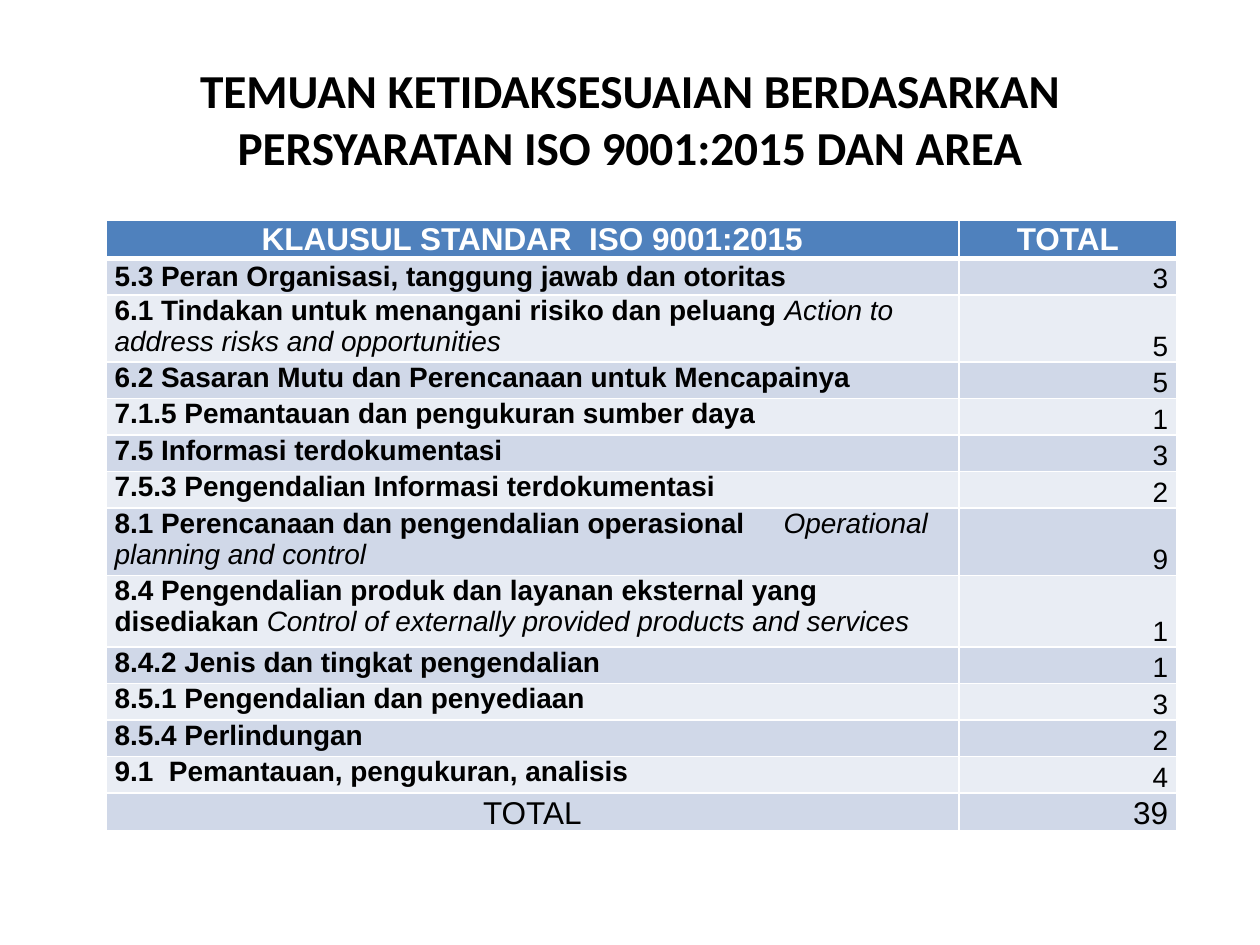
import dataclasses

import lxml.etree
import pptx
import pptx.dml.color
import pptx.enum.text
import pptx.oxml.ns
import pptx.table
import pptx.util

EMU_PER_PX = 9144
ROW_HEIGHT = 29
GAP_TAB = 531
INSET = 7
BANDS = ("D0D8E8", "E9EDF4")
ALIGN = pptx.enum.text.PP_ALIGN
ANCHOR = pptx.enum.text.MSO_ANCHOR


@dataclasses.dataclass(frozen=True)
class Clause:
    name: str
    count: int
    english: str = ""
    height: int = ROW_HEIGHT
    anchor: ANCHOR = ANCHOR.TOP


@dataclasses.dataclass(frozen=True)
class CellStyle:
    fill: str
    align: ALIGN
    anchor: ANCHOR
    size: int = 16
    bold: bool = False
    color: str = "000000"
    bottom_line: int = 1


CLAUSES = [
    Clause("5.3 Peran Organisasi, tanggung jawab dan otoritas", 3, anchor=ANCHOR.MIDDLE),
    Clause("6.1 Tindakan untuk menangani risiko dan peluang ", 5,
           "Action to address risks and opportunities", 49),
    Clause("6.2 Sasaran Mutu dan Perencanaan untuk Mencapainya", 5),
    Clause("7.1.5 Pemantauan dan pengukuran sumber daya", 1),
    Clause("7.5 Informasi terdokumentasi", 3),
    Clause("7.5.3 Pengendalian Informasi terdokumentasi", 2),
    Clause("8.1 Perencanaan dan pengendalian operasional\t", 9,
           "Operational planning and control", 49),
    Clause("8.4 Pengendalian produk dan layanan eksternal yang disediakan ", 1,
           "Control of externally provided products and services", 57),
    Clause("8.4.2 Jenis dan tingkat pengendalian", 1),
    Clause("8.5.1 Pengendalian dan penyediaan", 3),
    Clause("8.5.4 Perlindungan", 2),
    Clause("9.1  Pemantauan, pengukuran, analisis", 4),
]


def px(length: int) -> pptx.util.Emu:
    """Turn a length in px into EMU."""
    return pptx.util.Emu(length * EMU_PER_PX)


def rgb(value: str) -> pptx.dml.color.RGBColor:
    """Turn a hex string into a colour."""
    return pptx.dml.color.RGBColor.from_string(value)


def add_child(parent, tag: str, **attributes: str):
    """Append a DrawingML element to its parent."""
    return lxml.etree.SubElement(parent, pptx.oxml.ns.qn(tag), attributes)


def set_borders(cell: pptx.table._Cell, bottom_line: int) -> None:
    """Draw white lines on the four sides of a cell."""
    properties = cell._tc.get_or_add_tcPr()
    for side, width in (("L", 1), ("R", 1), ("T", 1), ("B", bottom_line)):
        line = add_child(properties, f"a:ln{side}", w=str(pptx.util.Pt(width)))
        add_child(add_child(line, "a:solidFill"), "a:srgbClr", val="FFFFFF")


def fill_cell(cell: pptx.table._Cell, text: str, style: CellStyle, english: str = "") -> None:
    """Write and style one cell, with an optional italic English ending."""
    set_borders(cell, style.bottom_line)
    cell.fill.solid()
    cell.fill.fore_color.rgb = rgb(style.fill)
    cell.margin_left = cell.margin_right = px(INSET)
    cell.margin_top = cell.margin_bottom = 0
    cell.vertical_anchor = style.anchor
    paragraph = cell.text_frame.paragraphs[0]
    paragraph.alignment = style.align
    paragraph.font.name = "Arial"
    paragraph.font.size = pptx.util.Pt(style.size)
    paragraph.font.color.rgb = rgb(style.color)
    if "\t" in text:
        tabs = lxml.etree.Element(pptx.oxml.ns.qn("a:tabLst"))
        add_child(tabs, "a:tab", pos=str(px(GAP_TAB)), algn="l")
        paragraph._p.get_or_add_pPr().insert(0, tabs)
    run = paragraph.add_run()
    run.text = text
    run.font.bold = style.bold
    if english:
        translation = paragraph.add_run()
        translation.text = english
        translation.font.bold = False
        translation.font.italic = True


def add_title(slide, text: str) -> None:
    """Add the centred slide title."""
    frame = slide.shapes.add_textbox(px(50), px(42), px(900), px(103)).text_frame
    frame.word_wrap = True
    frame.vertical_anchor = ANCHOR.MIDDLE
    paragraph = frame.paragraphs[0]
    paragraph.text = text
    paragraph.alignment = ALIGN.CENTER
    paragraph.font.name = "Calibri"
    paragraph.font.size = pptx.util.Pt(27)
    paragraph.font.bold = True
    paragraph.font.color.rgb = rgb("000000")


def add_findings(slide, clauses: list[Clause]) -> None:
    """Add the table of findings with its header and total rows."""
    heights = [ROW_HEIGHT, *(clause.height for clause in clauses), ROW_HEIGHT]
    shape = slide.shapes.add_table(len(heights), 2, px(84), px(175), px(850), px(sum(heights)))
    table = shape.table
    for column, width in zip(table.columns, (677, 173)):
        column.width = px(width)
    for row, height in zip(table.rows, heights):
        row.height = px(height)

    header = CellStyle("4F81BD", ALIGN.CENTER, ANCHOR.MIDDLE, 18, True, "FFFFFF", 3)
    fill_cell(table.cell(0, 0), "KLAUSUL STANDAR  ISO 9001:2015", header)
    fill_cell(table.cell(0, 1), "TOTAL", header)
    for index, clause in enumerate(clauses):
        band = BANDS[index % 2]
        name_style = CellStyle(band, ALIGN.LEFT, clause.anchor, bold=True)
        count_style = CellStyle(band, ALIGN.RIGHT, ANCHOR.BOTTOM)
        fill_cell(table.cell(index + 1, 0), clause.name, name_style, clause.english)
        fill_cell(table.cell(index + 1, 1), str(clause.count), count_style)
    last = len(heights) - 1
    total = sum(clause.count for clause in clauses)
    band = BANDS[len(clauses) % 2]
    fill_cell(table.cell(last, 0), "TOTAL", CellStyle(band, ALIGN.CENTER, ANCHOR.BOTTOM, 18))
    fill_cell(table.cell(last, 1), str(total), CellStyle(band, ALIGN.RIGHT, ANCHOR.BOTTOM, 18))


def main() -> None:
    presentation = pptx.Presentation()
    presentation.slide_width = px(1000)
    presentation.slide_height = px(750)
    slide = presentation.slides.add_slide(presentation.slide_layouts[6])
    add_title(slide, "TEMUAN KETIDAKSESUAIAN BERDASARKAN PERSYARATAN ISO 9001:2015 DAN AREA")
    add_findings(slide, CLAUSES)
    presentation.save("out.pptx")


if __name__ == "__main__":
    main()
